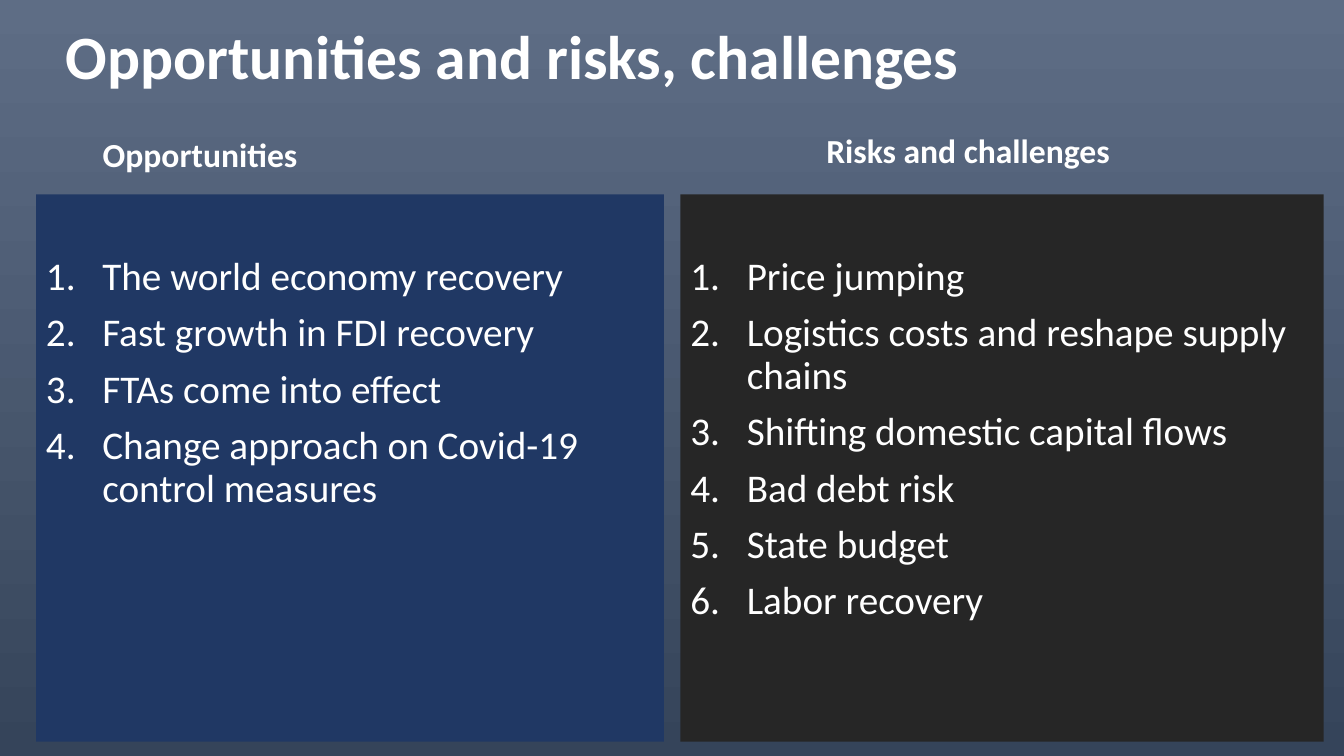
from lxml import etree
from pptx import Presentation, util as u
from pptx.dml.color import RGBColor
from pptx.enum import shapes, text
from pptx.oxml import ns


def rgb(value):
    return RGBColor.from_string(value)


class Deck:
    font = {"name": "Calibri", "color": "FFFFFF"}
    gradient = ("5E6D85", "35445A")
    indent = 1.42

    def __init__(self, width, height):
        self.prs = Presentation()
        self.prs.slide_width, self.prs.slide_height = u.Cm(width), u.Cm(height)

    def add_slide(self):
        self.s = self.prs.slides.add_slide(self.prs.slide_layouts[6])
        fill = self.s.background.fill
        fill.gradient()
        fill.gradient_angle = 270
        for stop, color in zip(fill.gradient_stops, self.gradient):
            stop.color.rgb = rgb(color)

    def fill_paragraph(self, p, words, align=text.PP_ALIGN.LEFT, before=0, **style):
        layout = {"alignment": align, "line_spacing": 0.9, "space_before": u.Pt(before)}
        for key, value in layout.items():
            setattr(p, key, value)
        r = p.add_run()
        r.text = words
        for key, value in {**self.font, **style}.items():
            if key == "color":
                r.font.color.rgb = rgb(value)
            else:
                setattr(r.font, key, value)

    def heading(self, box, words, size, anchor, **layout):
        sp = self.s.shapes.add_textbox(*map(u.Cm, box))
        tf = sp.text_frame
        tf.word_wrap = True
        tf.vertical_anchor = anchor
        self.fill_paragraph(tf.paragraphs[0], words, size=u.Pt(size), bold=True, **layout)

    def panel(self, box, color, items):
        sp = self.s.shapes.add_shape(shapes.MSO_SHAPE.RECTANGLE, *map(u.Cm, box))
        sp.shadow.inherit = False
        sp.fill.solid()
        sp.fill.fore_color.rgb = rgb(color)
        sp.line.fill.background()
        tf = sp.text_frame
        frame = {"word_wrap": True, "vertical_anchor": text.MSO_ANCHOR.TOP,
                 "margin_top": u.Cm(1.57)}
        for key, value in frame.items():
            setattr(tf, key, value)
        for i, item in enumerate(items):
            p = tf.add_paragraph() if i else tf.paragraphs[0]
            self.fill_paragraph(p, item, before=10, size=u.Pt(28))
            self.number(p)

    def number(self, p):
        pPr = p._p.get_or_add_pPr()
        indent = u.Cm(self.indent)
        for key, value in {"marL": indent, "indent": -indent}.items():
            pPr.set(key, str(value))
        etree.SubElement(pPr, ns.qn("a:buFont"), typeface="+mj-lt")
        etree.SubElement(pPr, ns.qn("a:buAutoNum"), type="arabicPeriod")


def main():
    deck = Deck(33.87, 19.05)
    deck.add_slide()
    deck.heading((1.4, 0.36, 29.21, 2.29), "Opportunities and risks, challenges",
                 44, text.MSO_ANCHOR.MIDDLE)
    columns = [
        ("Opportunities", (2.34, 2.84, 14.33, 1.7), text.PP_ALIGN.LEFT,
         0.91, 15.82, "203864",
         ["The world economy recovery", "Fast growth in FDI recovery",
          "FTAs come into effect", "Change approach on Covid-19 control measures"]),
        ("Risks and challenges", (17.2, 2.74, 14.4, 1.7), text.PP_ALIGN.CENTER,
         17.15, 16.21, "262626",
         ["Price jumping", "Logistics costs and reshape supply chains",
          "Shifting domestic capital flows", "Bad debt risk", "State budget",
          "Labor recovery"]),
    ]
    for label, box, align, left, width, color, items in columns:
        deck.heading(box, label, 24, text.MSO_ANCHOR.BOTTOM, align=align, before=10)
        deck.panel((left, 4.9, width, 13.79), color, items)
    deck.prs.save("out.pptx")


if __name__ == "__main__":
    main()
